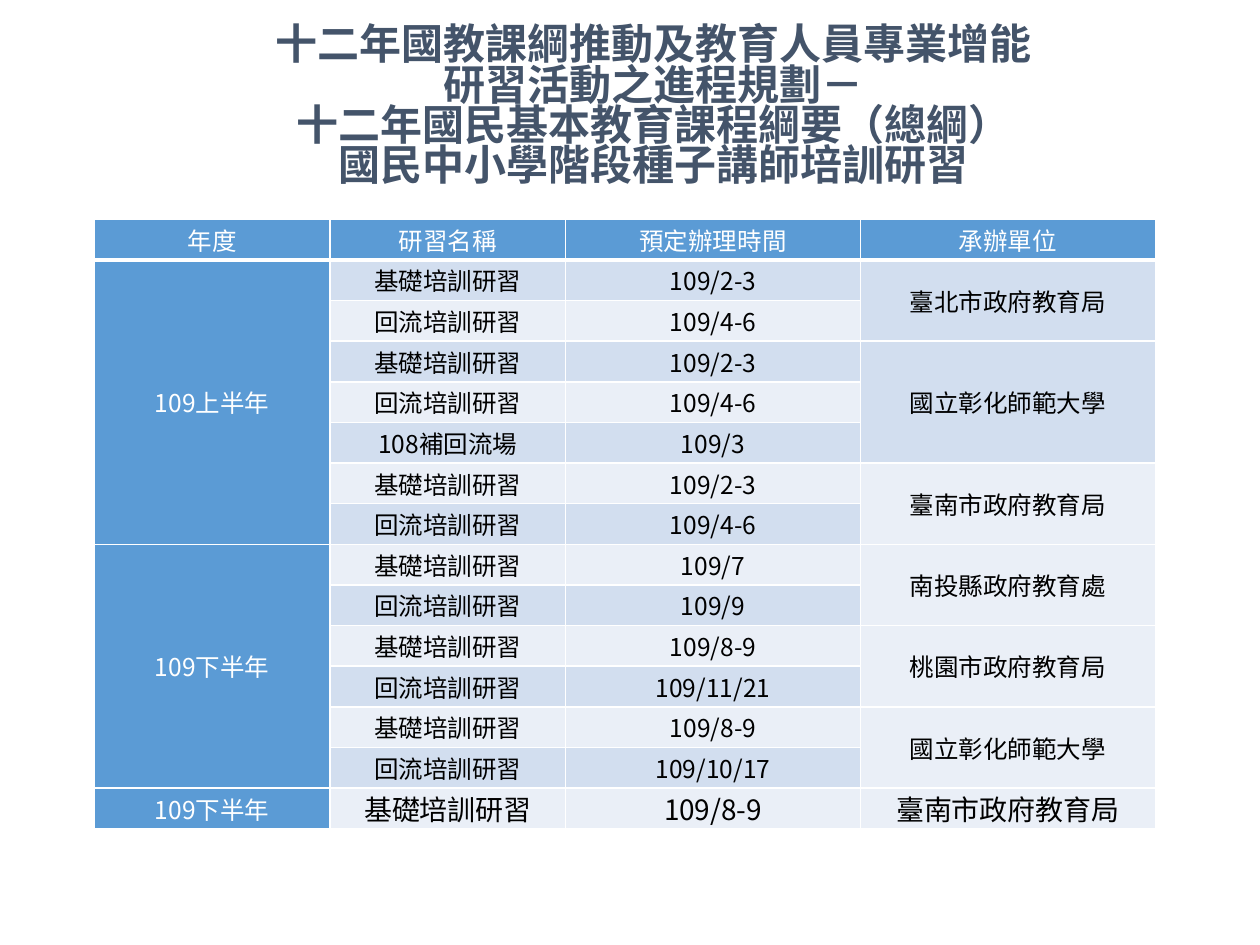
from dataclasses import dataclass

from lxml import etree
from pptx import Presentation
from pptx.dml.color import RGBColor
from pptx.enum.text import MSO_ANCHOR, PP_ALIGN
from pptx.oxml.ns import qn
from pptx.util import Inches, Pt

CENTER = PP_ALIGN.CENTER
MIDDLE = MSO_ANCHOR.MIDDLE


@dataclass(frozen=True)
class Theme:
    font: str = "Noto Sans CJK SC"
    title_color: str = "44546A"
    accent: str = "5B9BD5"
    band_dark: str = "D2DEEF"
    band_light: str = "EAEFF7"
    white: str = "FFFFFF"
    black: str = "000000"
    title_size: int = 24
    title_leading: int = 23
    body_size: int = 14
    closing_size: int = 16
    rule: int = 1
    header_rule: int = 3


TITLE = [
    "十二年國教課綱推動及教育人員專業增能",
    "研習活動之進程規劃－",
    "十二年國民基本教育課程綱要（總綱）",
    "國民中小學階段種子講師培訓研習",
]
HEADINGS = ["年度", "研習名稱", "預定辦理時間", "承辦單位"]
BASIC, RETURN = "基礎培訓研習", "回流培訓研習"
SCHEDULE = [
    ("109上半年", [
        ("臺北市政府教育局", [(BASIC, "109/2-3"), (RETURN, "109/4-6")]),
        ("國立彰化師範大學", [(BASIC, "109/2-3"), (RETURN, "109/4-6"), ("108補回流場", "109/3")]),
        ("臺南市政府教育局", [(BASIC, "109/2-3"), (RETURN, "109/4-6")]),
    ]),
    ("109下半年", [
        ("南投縣政府教育處", [(BASIC, "109/7"), (RETURN, "109/9")]),
        ("桃園市政府教育局", [(BASIC, "109/8-9"), (RETURN, "109/11/21")]),
        ("國立彰化師範大學", [(BASIC, "109/8-9"), (RETURN, "109/10/17")]),
    ]),
    ("109下半年", [
        ("臺南市政府教育局", [(BASIC, "109/8-9")]),
    ]),
]
COLUMN_WIDTHS = [1.87, 1.87, 2.34, 2.34]


class SlideBuilder:
    def __init__(self, slide, theme):
        self.slide = slide
        self.theme = theme

    def run(self, paragraph, text, size, color, bold=False):
        run = paragraph.add_run()
        run.text = text
        run.font.size = Pt(size)
        run.font.bold = bold
        run.font.color.rgb = RGBColor.from_string(color)
        run.font.name = self.theme.font
        east_asian = etree.SubElement(run.font._element, qn("a:ea"))
        east_asian.set("typeface", self.theme.font)

    def title(self, lines, left, top, width, height):
        frame = self.slide.shapes.add_textbox(
            Inches(left), Inches(top), Inches(width), Inches(height)).text_frame
        frame.word_wrap = True
        frame.vertical_anchor = MIDDLE
        paragraph = frame.paragraphs[0]
        paragraph.alignment = CENTER
        paragraph.line_spacing = Pt(self.theme.title_leading)
        for index, line in enumerate(lines):
            if index:
                paragraph.add_line_break()
            self.run(paragraph, line, self.theme.title_size, self.theme.title_color, bold=True)

    def table(self, row_count, widths, left, top, height):
        table = self.slide.shapes.add_table(
            row_count, len(widths), Inches(left), Inches(top),
            Inches(sum(widths)), Inches(height)).table
        for column, width in zip(table.columns, widths):
            column.width = Inches(width)
        for row_index, row in enumerate(table.rows):
            row.height = Inches(height / row_count)
            for column_index, cell in enumerate(row.cells):
                self.cell_style(cell, row_index, column_index)
        return table

    def cell_style(self, cell, row, column):
        theme = self.theme
        cell.margin_left = cell.margin_right = Inches(0.07)
        cell.margin_top = cell.margin_bottom = 0
        cell.vertical_anchor = MIDDLE
        for side in "LRTB":
            width = theme.header_rule if row == 0 and side == "B" else theme.rule
            border = etree.SubElement(cell._tc.get_or_add_tcPr(), qn(f"a:ln{side}"))
            border.set("w", str(Pt(width)))
            fill = etree.SubElement(border, qn("a:solidFill"))
            etree.SubElement(fill, qn("a:srgbClr")).set("val", theme.white)
        band = theme.band_dark if row % 2 else theme.band_light
        cell.fill.solid()
        cell.fill.fore_color.rgb = RGBColor.from_string(
            theme.accent if row == 0 or column == 0 else band)

    def cell_text(self, table, row, column, text, size, color, span=1):
        cell = table.cell(row, column)
        if span > 1:
            cell.merge(table.cell(row + span - 1, column))
        paragraph = cell.text_frame.paragraphs[0]
        paragraph.alignment = CENTER
        self.run(paragraph, text, size, color)

    def schedule(self, headings, years, widths, left, top, height):
        theme = self.theme
        year_spans = [sum(len(sessions) for _, sessions in hosts) for _, hosts in years]
        table = self.table(1 + sum(year_spans), widths, left, top, height)
        for column, heading in enumerate(headings):
            self.cell_text(table, 0, column, heading, theme.body_size, theme.white)
        row = 1
        for (year, hosts), year_span in zip(years, year_spans):
            self.cell_text(table, row, 0, year, theme.body_size, theme.white, year_span)
            size = theme.closing_size if year_span == 1 else theme.body_size
            for host, sessions in hosts:
                self.cell_text(table, row, 3, host, size, theme.black, len(sessions))
                for session, date in sessions:
                    self.cell_text(table, row, 1, session, size, theme.black)
                    self.cell_text(table, row, 2, date, size, theme.black)
                    row += 1


def main():
    presentation = Presentation()
    presentation.slide_width = Inches(10)
    presentation.slide_height = Inches(7.5)
    slide = presentation.slides.add_slide(presentation.slide_layouts[6])
    builder = SlideBuilder(slide, Theme())
    builder.title(TITLE, 0.69, 0.1, 9, 1.52)
    builder.schedule(HEADINGS, SCHEDULE, COLUMN_WIDTHS, 0.75, 1.74, 4.84)
    presentation.save("out.pptx")


if __name__ == "__main__":
    main()
